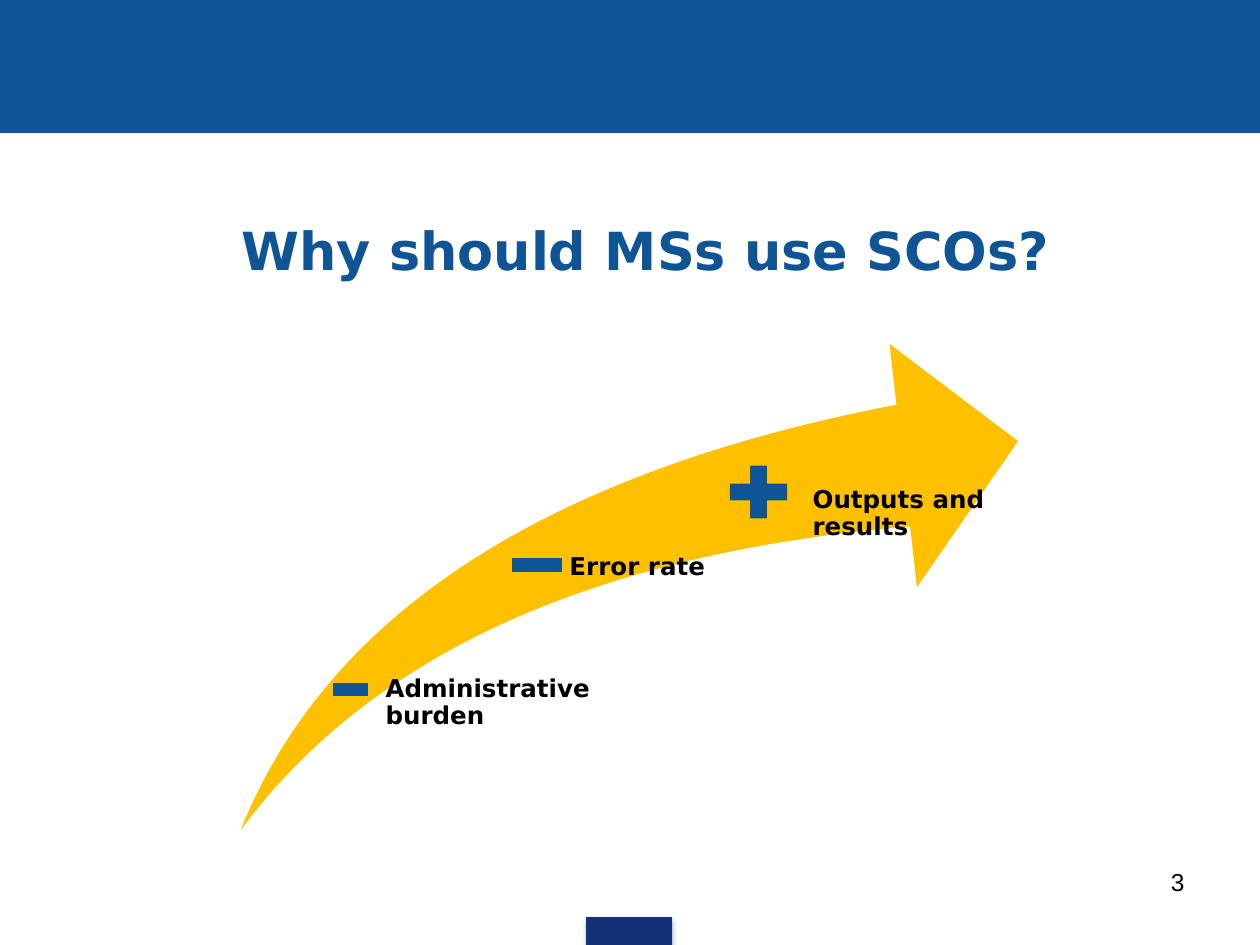
"""Builds the slide on why Member States should use SCOs."""
import lxml.etree
import pptx
import pptx.dml.color
import pptx.enum.shapes
import pptx.enum.text
import pptx.oxml.ns
import pptx.util

Inches = pptx.util.Inches
Pt = pptx.util.Pt
SHAPE = pptx.enum.shapes.MSO_SHAPE
ALIGN = pptx.enum.text.PP_ALIGN
ANCHOR = pptx.enum.text.MSO_ANCHOR
COLORS = {"blue": "0F5494", "navy": "133176", "gold": "FFC000", "black": "000000"}
HEADING = {"name": "DejaVu Sans", "size": Pt(30), "bold": True}
LABEL = {"name": "DejaVu Sans", "size": Pt(14), "bold": True}
NUMBER = {"name": "Arial", "size": Pt(14), "bold": False}


def color(name):
    return pptx.dml.color.RGBColor.from_string(COLORS[name])


class SlideBuilder:
    def __init__(self, deck):
        self.slide = deck.slides.add_slide(deck.slide_layouts[5])

    def add_span(self, para, text, style, ink):
        span = para.add_run()
        span.text = text
        for key, value in style.items():
            setattr(span.font, key, value)
        span.font.color.rgb = color(ink)

    def title(self, text, *place):
        box = self.slide.shapes.title
        for key, value in zip(("left", "top", "width", "height"), place):
            setattr(box, key, Inches(value))
        frame = box.text_frame
        frame.auto_size = pptx.enum.text.MSO_AUTO_SIZE.NONE
        frame.vertical_anchor = ANCHOR.MIDDLE
        para = frame.paragraphs[0]
        para.alignment = ALIGN.CENTER
        properties = para._p.get_or_add_pPr()
        properties.set("marL", str(Inches(0.39)))
        properties.set("indent", "0")
        self.add_span(para, text, HEADING, "blue")

    def shape(self, kind, fill, *place, outlined=False):
        shape = self.slide.shapes.add_shape(kind, *map(Inches, place))
        shape.fill.solid()
        shape.fill.fore_color.rgb = color(fill)
        if outlined:
            shape.line.color.rgb = color(fill)
            shape.line.width = Pt(0.75)
        else:
            shape.line.fill.background()
        shape.shadow.inherit = False
        return shape

    def drop_shadow(self, shape):
        qn = pptx.oxml.ns.qn
        effects = shape._element.spPr.find(qn("a:effectLst"))
        shadow = lxml.etree.SubElement(
            effects, qn("a:outerShdw"), blurRad=str(Pt(3.1)), dist=str(Pt(1.8)),
            dir="5400000", rotWithShape="0")
        tint = lxml.etree.SubElement(shadow, qn("a:srgbClr"), val=COLORS["black"])
        lxml.etree.SubElement(tint, qn("a:alpha"), val="35000")

    def text(self, text, style, *place, inset=None, **layout):
        box = self.slide.shapes.add_textbox(*map(Inches, place))
        frame = box.text_frame
        frame.word_wrap = True
        if inset is not None:
            margins = {"margin_left": inset, "margin_top": 0,
                       "margin_right": 0, "margin_bottom": 0}
            for key, value in margins.items():
                setattr(frame, key, Inches(value))
        para = frame.paragraphs[0]
        for key, value in layout.items():
            setattr(para, key, value)
        self.add_span(para, text, style, "black")


def main():
    deck = pptx.Presentation()
    deck.slide_width, deck.slide_height = Inches(10), Inches(7.5)
    page = SlideBuilder(deck)
    page.shape(SHAPE.RECTANGLE, "blue", 0, 0, 10, 1.05, outlined=True)
    tab = page.shape(SHAPE.RECTANGLE, "navy", 4.66, 7.28, 0.67, 0.22, outlined=True)
    page.drop_shadow(tab)
    page.title("Why should MSs use SCOs?", 0.43, 1.47, 9, 1.02)

    arrow = page.shape(SHAPE.SWOOSH_ARROW, "gold", 1.91, 2.73, 6.17, 3.86)
    arrow.adjustments[0] = arrow.adjustments[1] = 0.25

    steps = [
        (SHAPE.MATH_MINUS, (2.59, 5.26, 0.38, 0.43),
         "Administrative burden", (2.97, 5.37, 1.96, 0.59), 0.09),
        (SHAPE.MATH_MINUS, (3.99, 4.24, 0.54, 0.49),
         "Error rate", (4.37, 4.4, 1.56, 0.38), 0.15),
        (SHAPE.MATH_PLUS, (5.71, 3.62, 0.62, 0.57),
         "Outputs and results", (6.24, 3.87, 2.04, 0.53), 0.21),
    ]
    for sign, sign_place, label, label_place, inset in steps:
        page.shape(sign, "blue", *sign_place)
        page.text(label, LABEL, *label_place, inset=inset, line_spacing=0.9)

    page.text("3", NUMBER, 7.17, 6.83, 2.33, 0.52, alignment=ALIGN.RIGHT)
    deck.save("out.pptx")


if __name__ == "__main__":
    main()
